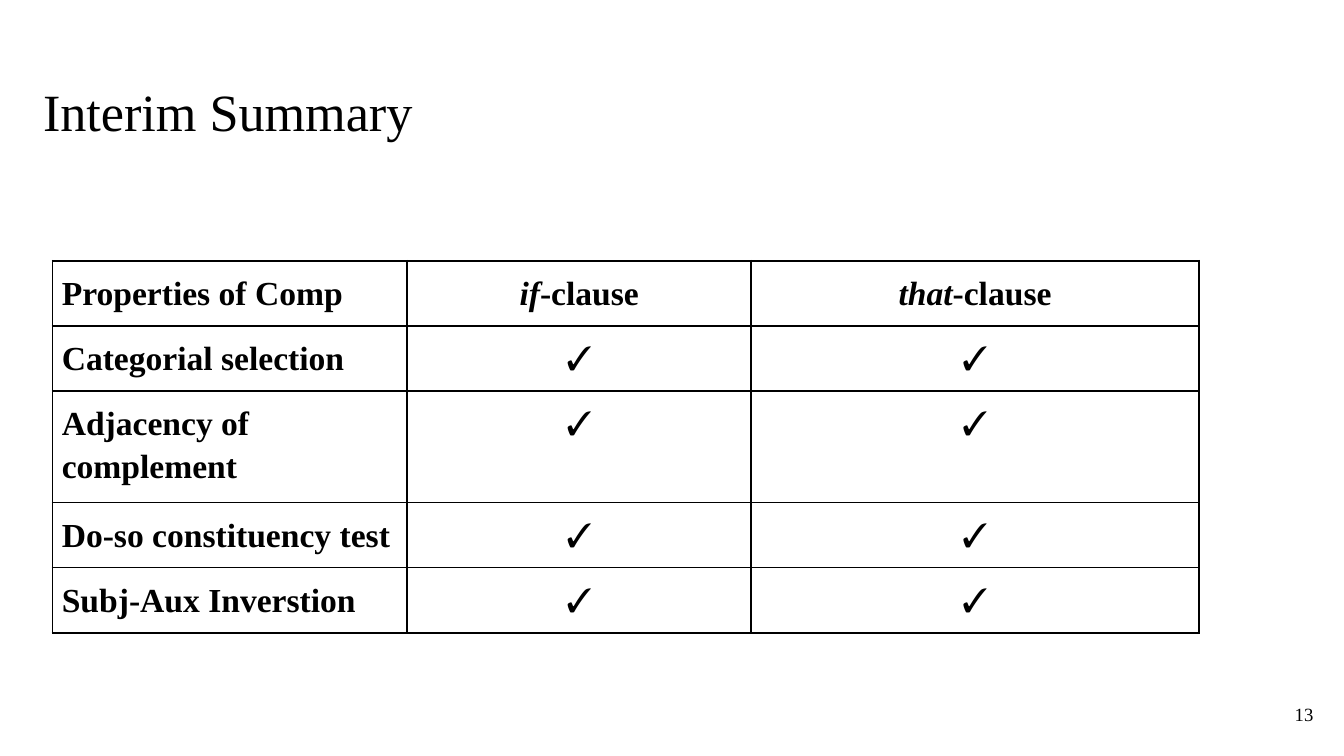
from lxml import etree
from pptx import Presentation
from pptx.dml.color import RGBColor
from pptx.enum.text import MSO_ANCHOR, PP_ALIGN
from pptx.oxml.ns import qn
from pptx.util import Inches, Pt

BLACK = RGBColor(0, 0, 0)
FONT = "Times New Roman"
TOP, MIDDLE = MSO_ANCHOR.TOP, MSO_ANCHOR.MIDDLE
LEFT, CENTER, RIGHT = PP_ALIGN.LEFT, PP_ALIGN.CENTER, PP_ALIGN.RIGHT
TITLE_ONLY = 5
SIDES = ("left", "right", "top", "bottom")
SLIDE_WIDTH = Inches(10)
SLIDE_HEIGHT = SLIDE_WIDTH * 9 // 16

FRAME_SIZE = Inches(3.28)
COLUMN_WIDTHS = (2.64, 2.56, 3.33)
CLAUSES = ("if", "that")
PROPERTIES = (
    "Categorial selection",
    "Adjacency of complement",
    "Do-so constituency test",
    "Subj-Aux Inverstion",
)


def set_values(target, values):
    """Set each attribute named in values on the target."""
    for name, value in values.items():
        setattr(target, name, value)


def add_span(para, text, size, **values):
    """Add one run of black text to the paragraph."""
    span = para.add_run()
    span.text = text
    set_values(span.font, {"name": FONT, "size": Pt(size), **values})
    span.font.color.rgb = BLACK


def fill_box(box, text, size, align, anchor):
    """Write one line of text into a title or text box."""
    frame = box.text_frame
    margins = {f"margin_{side}": Inches(0.1) for side in SIDES}
    set_values(frame, {"word_wrap": True, "vertical_anchor": anchor, **margins})
    para = frame.paragraphs[0]
    para.alignment = align
    add_span(para, text, size)


def add_title(page, text):
    """Place and fill the title placeholder."""
    title = page.shapes.title
    place = {"left": 0.22, "top": 0.49, "width": 9.43, "height": 0.63}
    set_values(title, {name: Inches(length) for name, length in place.items()})
    fill_box(title, text, 28, LEFT, TOP)


def add_page_number(page, number):
    """Add the page number at the lower right."""
    box = page.shapes.add_textbox(Inches(9.27), Inches(5.1), Inches(0.6), Inches(0.43))
    fill_box(box, number, 10, RIGHT, MIDDLE)


def add_borders(cell):
    """Draw a thin black line on all four sides of the cell."""
    properties = cell._tc.get_or_add_tcPr()
    for index, side in enumerate("LRTB"):
        line = etree.Element(qn(f"a:ln{side}"), w=str(Pt(1)))
        fill = etree.SubElement(line, qn("a:solidFill"))
        etree.SubElement(fill, qn("a:srgbClr"), val=str(BLACK))
        properties.insert(index, line)


def fill_cell(cell, spans, align):
    """Write bold spans, given as text and italic pairs, into a cell."""
    margins = {f"margin_{side}": Inches(0.07) for side in SIDES}
    set_values(cell, {"vertical_anchor": TOP, **margins})
    cell.fill.background()
    para = cell.text_frame.paragraphs[0]
    set_values(para, {"alignment": align, "line_spacing": 1.15})
    for text, italic in spans:
        add_span(para, text, 18, bold=True, italic=italic)
    add_borders(cell)


def add_properties_table(page):
    """Add the table of clause properties, with rows that grow to fit the text."""
    header = [[("Properties of Comp", False)]]
    header += [[(word, True), ("-clause", False)] for word in CLAUSES]
    checks = [[("✓", False)] for _ in CLAUSES]
    rows = [header] + [[[(name, False)]] + checks for name in PROPERTIES]
    frame = page.shapes.add_table(
        len(rows), len(COLUMN_WIDTHS), Inches(0.39), Inches(1.94),
        FRAME_SIZE, FRAME_SIZE)
    table = frame.table
    set_values(table, {"first_row": False, "horz_banding": False})
    for column, width in zip(table.columns, COLUMN_WIDTHS):
        column.width = Inches(width)
    for row, contents in zip(table.rows, rows):
        row.height = Inches(0)
        for index, (cell, spans) in enumerate(zip(row.cells, contents)):
            fill_cell(cell, spans, CENTER if index else LEFT)
    set_values(frame, {"width": FRAME_SIZE, "height": FRAME_SIZE})


def main():
    """Build the summary slide and save the deck."""
    deck = Presentation()
    set_values(deck, {"slide_width": SLIDE_WIDTH, "slide_height": SLIDE_HEIGHT})
    page = deck.slides.add_slide(deck.slide_layouts[TITLE_ONLY])
    add_title(page, "Interim Summary")
    add_page_number(page, "13")
    add_properties_table(page)
    deck.save("out.pptx")


if __name__ == "__main__":
    main()
